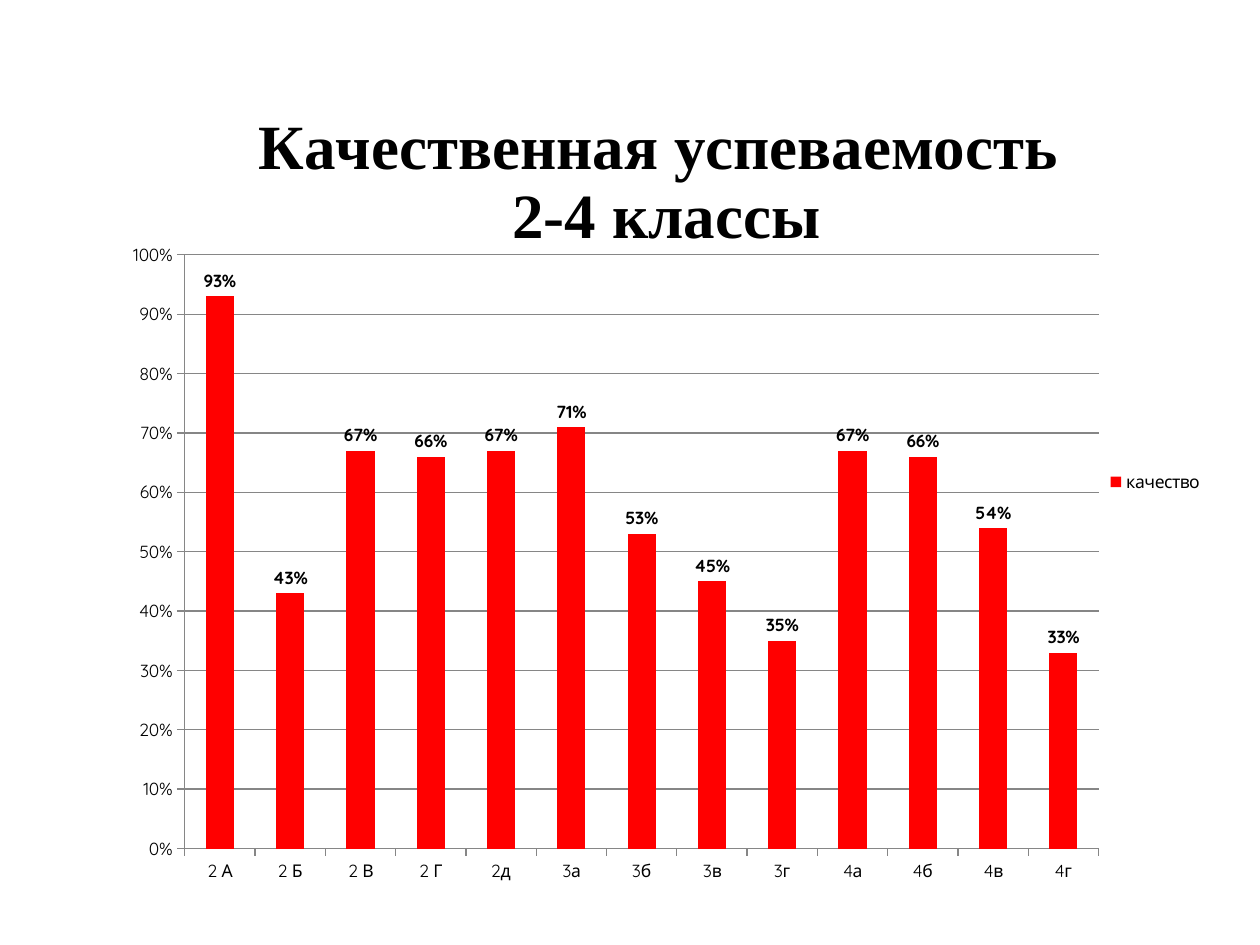
from lxml import etree
from pptx import Presentation
from pptx.chart.data import CategoryChartData
from pptx.dml.color import RGBColor
from pptx.enum.chart import XL_CHART_TYPE as ChartType
from pptx.enum.chart import XL_LABEL_POSITION as LabelPos
from pptx.enum.chart import XL_LEGEND_POSITION as LegendPos
from pptx.enum.chart import XL_TICK_MARK as Tick
from pptx.enum.text import PP_ALIGN as Align
from pptx.oxml.ns import qn
from pptx.util import Inches, Pt

COLORS = {"text": "000000", "bar": "FF0000", "line": "868686"}
GRADES = {
    "2 А": 0.93, "2 Б": 0.43, "2 В": 0.67, "2 Г": 0.66, "2д": 0.67,
    "3а": 0.71, "3б": 0.53, "3в": 0.45, "3г": 0.35,
    "4а": 0.67, "4б": 0.66, "4в": 0.54, "4г": 0.33,
}


def set_layout(parent, index, **values):
    """Place a chart part by hand, in fractions of the chart."""
    for old in parent.findall(qn("c:layout")):
        parent.remove(old)
    layout = etree.Element(qn("c:layout"))
    manual = etree.SubElement(layout, qn("c:manualLayout"))
    for tag, value in values.items():
        etree.SubElement(manual, qn(f"c:{tag}")).set("val", str(value))
    parent.insert(index, layout)


class SlideBuilder:
    font = "Quicksand"
    title_font = "Times New Roman"
    size = Pt(10)
    title_size = Pt(36)

    def __init__(self, slide):
        self.s = slide

    def color(self, name):
        return RGBColor.from_string(COLORS[name])

    def style(self, font, name, size, bold=False):
        font.name, font.size, font.bold = name, size, bold
        font.color.rgb = self.color("text")

    def line(self, fmt):
        fmt.line.color.rgb = self.color("line")
        fmt.line.width = Pt(0.75)

    def column_chart(self, box, name, values):
        data = CategoryChartData(number_format="0%")
        data.categories = list(values)
        data.add_series(name, list(values.values()))
        frame = self.s.shapes.add_chart(
            ChartType.COLUMN_CLUSTERED, *map(Inches, box), data)
        chart = frame.chart
        self.style(chart.font, self.font, self.size)

        # Columns and their labels
        plot = chart.plots[0]
        plot.vary_by_categories = False
        plot.gap_width = 150
        fill = plot.series[0].format.fill
        fill.solid()
        fill.fore_color.rgb = self.color("bar")
        labels = plot.series[0].data_labels
        labels.show_value = True
        labels.number_format, labels.number_format_is_linked = "0%", False
        labels.position = LabelPos.OUTSIDE_END
        self.style(labels.font, self.font, self.size, bold=True)

        # Axes
        for axis in (chart.category_axis, chart.value_axis):
            axis.major_tick_mark = Tick.OUTSIDE
            axis.minor_tick_mark = Tick.NONE
            self.line(axis.format)
        axis = chart.value_axis
        axis.minimum_scale, axis.maximum_scale, axis.major_unit = 0, 1, 0.1
        axis.tick_labels.number_format = "0%"
        axis.tick_labels.number_format_is_linked = False
        axis.has_major_gridlines = True
        self.line(axis.major_gridlines.format)

        # Legend
        chart.has_legend = True
        chart.legend.position = LegendPos.RIGHT
        chart.legend.include_in_layout = False
        self.style(chart.legend.font, self.font, self.size)

        # Plot area
        area = chart.plots[0]._element.getparent()
        set_layout(area, 0, layoutTarget="inner", xMode="edge", yMode="edge",
                   x=0.12, y=0.24, w=0.78, h=0.68)
        return chart

    def chart_title(self, chart, lines, x, y):
        chart.has_title = True
        title = chart.chart_title
        tf = title.text_frame
        for i, text in enumerate(lines):
            p = tf.add_paragraph() if i else tf.paragraphs[0]
            p.alignment = Align.CENTER
            self.style(p.font, self.title_font, self.title_size, bold=True)
            r = p.add_run()
            r.text = text
            self.style(r.font, self.title_font, self.title_size, bold=True)
        title.include_in_layout = False
        set_layout(title._element, 1, xMode="edge", yMode="edge", x=x, y=y)


def main():
    prs = Presentation()
    prs.slide_width, prs.slide_height = Inches(10), Inches(7.5)
    builder = SlideBuilder(prs.slides.add_slide(prs.slide_layouts[6]))

    # Chart of the share of good marks by class
    chart = builder.column_chart((0.35, 0.36, 9.3, 6.93), "качество", GRADES)
    builder.chart_title(
        chart, ["Качественная успеваемость", " 2-4 классы"], x=0.18, y=0.07)

    prs.save("out.pptx")


if __name__ == "__main__":
    main()
